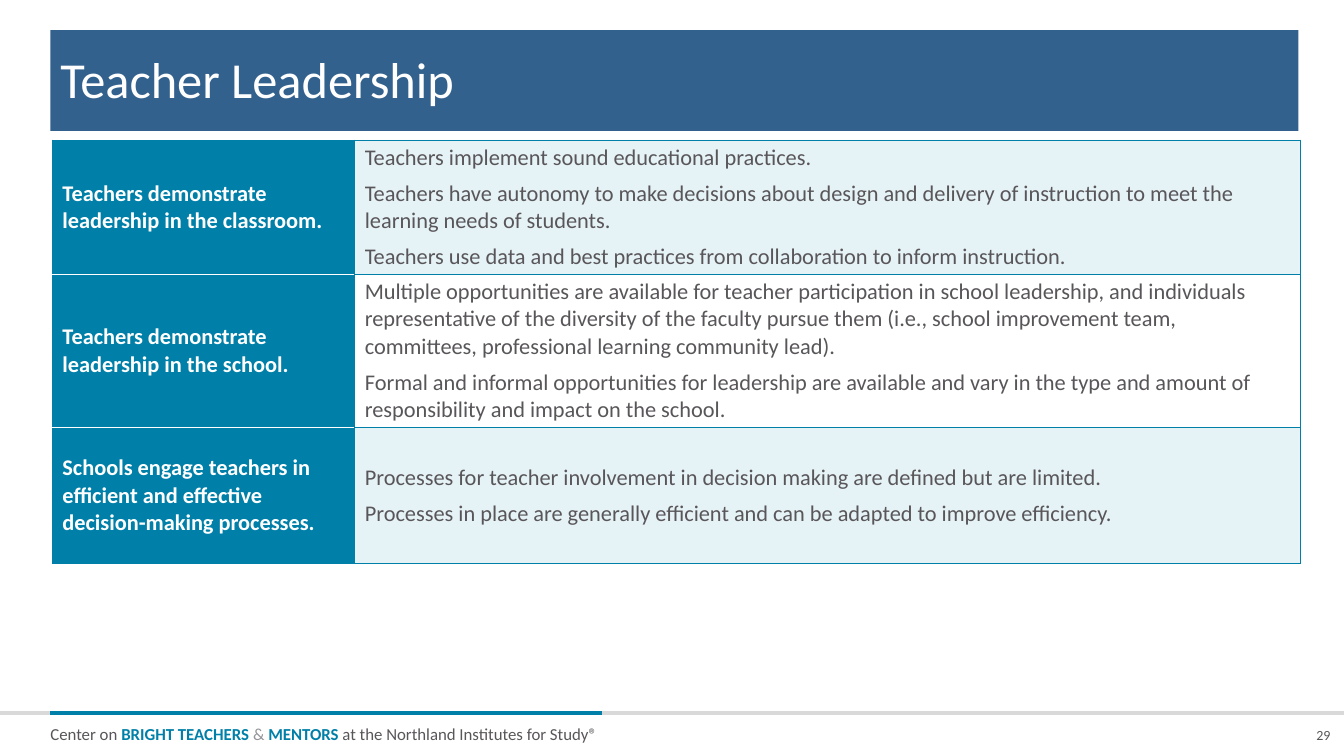
from lxml.etree import SubElement
from pptx import Presentation
from pptx.dml.color import RGBColor
from pptx.enum.shapes import MSO_CONNECTOR as Link, MSO_SHAPE as Form
from pptx.enum.text import MSO_ANCHOR as Anchor, PP_ALIGN as Align
from pptx.oxml.ns import qn
from pptx.util import Cm, Pt

TEAL, NAVY, GRAY, WHITE = "0080A8", "33618E", "59565A", "FFFFFF"
PALE, RULE, SOFT = "E5F2F6", "D9D9D9", "939598"
WIDTH, HEIGHT, LEFT, SPAN = 33.87, 19.05, 1.27, 31.45

ROWS = [
    (3.38, "Teachers demonstrate leadership in the classroom.", [
        "Teachers implement sound educational practices.",
        "Teachers have autonomy to make decisions about design and delivery of "
        "instruction to meet the learning needs of students.",
        "Teachers use data and best practices from collaboration to inform instruction."]),
    (3.86, "Teachers demonstrate leadership in the school.", [
        "Multiple opportunities are available for teacher participation in school "
        "leadership, and individuals representative of the diversity of the faculty "
        "pursue them (i.e., school improvement team, committees, professional "
        "learning community lead).",
        "Formal and informal opportunities for leadership are available and vary in "
        "the type and amount of responsibility and impact on the school."]),
    (3.43, "Schools engage teachers in efficient and effective decision-making processes.", [
        "Processes for teacher involvement in decision making are defined but are limited.",
        "Processes in place are generally efficient and can be adapted to improve efficiency."]),
]
CREDIT = [
    ("Center on ", GRAY, False), ("BRIGHT TEACHERS ", TEAL, True), ("& ", SOFT, False),
    ("MENTORS", TEAL, True), (" at the Northland Institutes for Study®", GRAY, False),
]


def tint(code):
    """Turn a hex string into a colour."""
    return RGBColor.from_string(code)


def style(font, size, code, bold=False):
    """Set the face, size, colour and weight of a font."""
    font.name, font.size, font.bold = "Calibri", Pt(size), bold
    font.color.rgb = tint(code)


def label(slide, box, anchor=Anchor.TOP, wrap=False, inset=0):
    """Add a text box and return its first paragraph."""
    frame = slide.shapes.add_textbox(*map(Cm, box)).text_frame
    frame.margin_left = Cm(inset)
    frame.margin_top = frame.margin_right = frame.margin_bottom = 0
    frame.vertical_anchor, frame.word_wrap = anchor, wrap
    return frame.paragraphs[0]


def rule(slide, start, end, top, code):
    """Draw a flat horizontal line."""
    line = slide.shapes.add_connector(Link.STRAIGHT, Cm(start), Cm(top), Cm(end), Cm(top))
    line.line.color.rgb, line.line.width = tint(code), Pt(3)
    SubElement(line._element.spPr, qn("a:effectLst"))


def edge(cell, sides):
    """Give each side of a cell a thin line of its own colour."""
    props = cell._tc.get_or_add_tcPr()
    for side, code in sides.items():
        line = SubElement(props, qn(f"a:ln{side}"), w=str(Pt(0.75)))
        SubElement(SubElement(line, qn("a:solidFill")), qn("a:srgbClr"), val=code)


def paint(cell, texts, back, code, bold, gap, sides):
    """Fill a table cell with paragraphs, colour and borders."""
    edge(cell, sides)
    cell.fill.solid()
    cell.fill.fore_color.rgb = tint(back)
    cell.vertical_anchor = Anchor.MIDDLE
    cell.margin_top = cell.margin_bottom = Cm(0.1)
    cell.text = "\n".join(texts)
    for para in cell.text_frame.paragraphs:
        style(para.font, 16, code, bold)
        para.space_before = Pt(gap)


def banner(slide, left, top, width, height):
    """Place the title bar."""
    bar = slide.shapes.add_shape(Form.RECTANGLE, *map(Cm, (left, top, width, height)))
    bar.shadow.inherit = False
    bar.fill.solid()
    bar.fill.fore_color.rgb = tint(NAVY)
    bar.line.fill.background()


def title(slide, left, top, width, height):
    """Place the slide title."""
    para = label(slide, (left, top, width, height), Anchor.BOTTOM, True, 0.25)
    para.text, para.line_spacing = "Teacher Leadership", 0.9
    style(para.font, 36, WHITE)


def matrix(slide, left, top, width, first):
    """Place the table of goals and practices."""
    height = sum(row[0] for row in ROWS)
    box = map(Cm, (left, top, width, height))
    table = slide.shapes.add_table(len(ROWS), 2, *box).table
    table.columns[0].width, table.columns[1].width = Cm(first), Cm(width - first)
    frame = dict.fromkeys("LRTB", TEAL)
    last = len(ROWS) - 1
    for i, (tall, goal, notes) in enumerate(ROWS):
        table.rows[i].height = Cm(tall)
        sides = frame | {"T": WHITE if i else TEAL, "B": WHITE if i < last else TEAL}
        paint(table.cell(i, 0), [goal], TEAL, WHITE, True, 0, sides)
        paint(table.cell(i, 1), notes, WHITE if i % 2 else PALE, GRAY, False, 6, frame)


def footer(slide, left, top, width, height):
    """Place the rules, credit line and page number."""
    rule(slide, left, left + width, top, RULE)
    rule(slide, left + LEFT, left + 15.16, top, TEAL)
    para = label(slide, (left + LEFT, top + 0.15, 14.5, 0.58), wrap=True)
    para.line_spacing = 1.25
    for text, code, bold in CREDIT:
        run = para.add_run()
        run.text = text
        style(run.font, 12, code, bold)
    page = label(slide, (left + width - 0.77, top + height - 0.76, 0.43, 0.43), Anchor.BOTTOM)
    page.text, page.alignment = "29", Align.RIGHT
    style(page.font, 10, GRAY)


def main():
    """Build and save the slide."""
    deck = Presentation()
    deck.slide_width, deck.slide_height = Cm(WIDTH), Cm(HEIGHT)
    slide = deck.slides.add_slide(deck.slide_layouts[6])
    footer(slide, 0, 17.96, WIDTH, HEIGHT - 17.96)
    banner(slide, LEFT, 0.76, SPAN, 2.54)
    matrix(slide, 1.32, 3.53, SPAN, 7.62)
    title(slide, LEFT, 0, SPAN, 2.77)
    deck.save("out.pptx")


if __name__ == "__main__":
    main()
